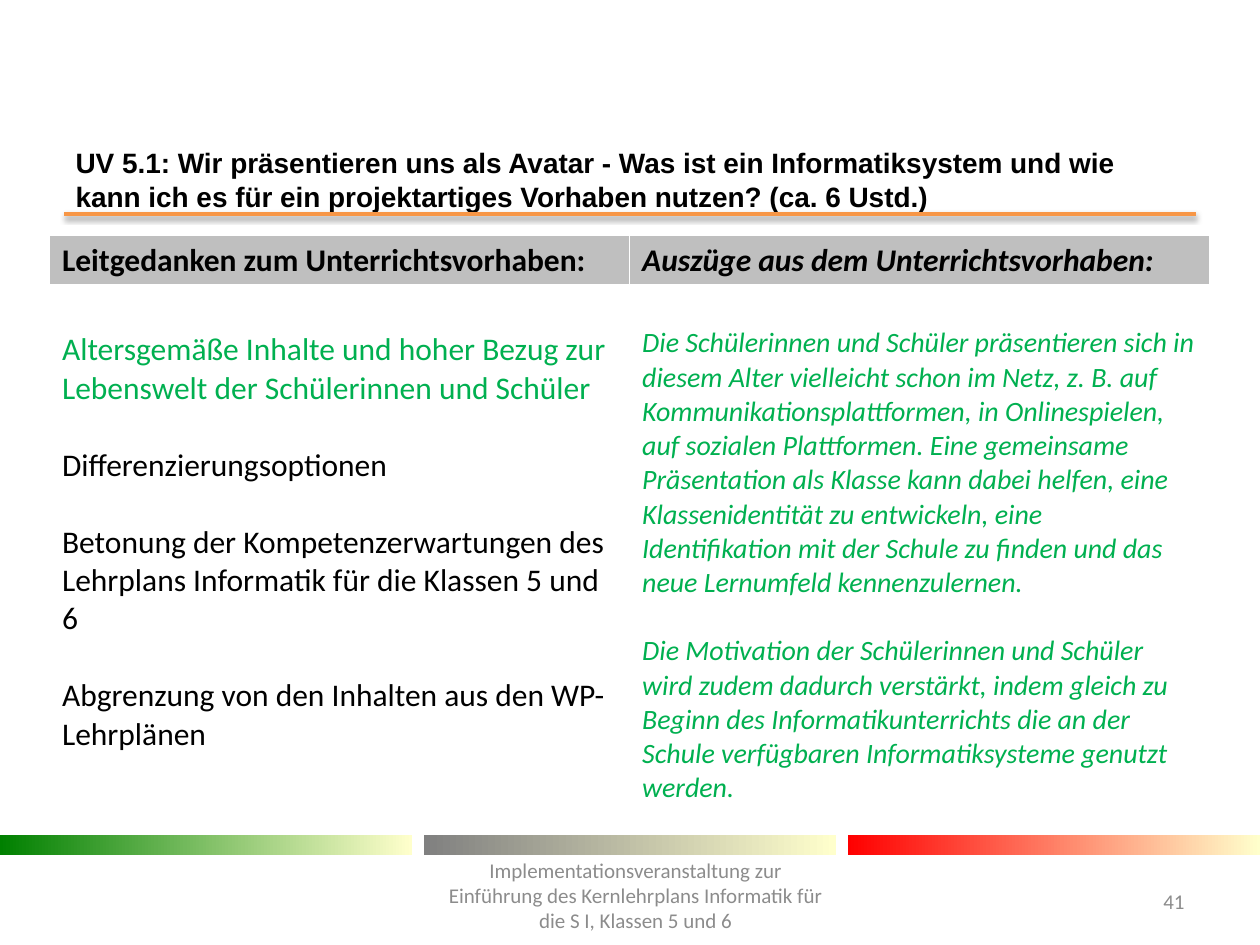
from dataclasses import dataclass
from typing import Optional

from lxml.etree import SubElement
from pptx import Presentation
from pptx.dml.color import RGBColor
from pptx.enum.shapes import MSO_CONNECTOR, MSO_SHAPE
from pptx.enum.text import MSO_ANCHOR, MSO_AUTO_SIZE, PP_ALIGN
from pptx.oxml import parse_xml
from pptx.oxml.ns import nsdecls, qn
from pptx.util import Pt


@dataclass(frozen=True)
class Theme:
    heading_font: str = "Arial"
    body_font: str = "Calibri"
    black: str = "000000"
    white: str = "FFFFFF"
    green: str = "00B050"
    grey: str = "8C8C8C"
    header_fill: str = "BFBFBF"
    rule: str = "F79646"
    band_end: str = "FFFFCC"
    band_starts: tuple = ("008000", "808080", "FF0000")
    title_size: float = 16
    large: float = 18
    medium: float = 16
    small: float = 12


@dataclass(frozen=True)
class TextStyle:
    size: float
    color: str
    font: str = Theme.body_font
    bold: bool = False
    italic: bool = False


@dataclass(frozen=True)
class Box:
    left: float
    top: float
    width: float
    height: float

    def lengths(self) -> tuple:
        return Pt(self.left), Pt(self.top), Pt(self.width), Pt(self.height)


@dataclass(frozen=True)
class Column:
    heading: str
    paragraphs: tuple
    size: float
    colors: tuple
    italic: bool


THEME = Theme()
LINE_FACTOR = 1.22  # line height of the body font relative to its size
CELL_MARGIN = 3.6

TITLE = ("UV 5.1: Wir präsentieren uns als Avatar - Was ist ein Informatiksystem "
         "und wie kann ich es für ein projektartiges Vorhaben nutzen? (ca. 6 Ustd.)")
FOOTER = ("Implementationsveranstaltung zur Einführung des Kernlehrplans "
          "Informatik für die S I, Klassen 5 und 6")
COLUMNS = (
    Column(
        "Leitgedanken zum Unterrichtsvorhaben:",
        ("Altersgemäße Inhalte und hoher Bezug zur Lebenswelt der Schülerinnen und Schüler",
         "Differenzierungsoptionen",
         "Betonung der Kompetenzerwartungen des Lehrplans Informatik für die Klassen 5 und 6",
         "Abgrenzung von den Inhalten aus den WP-Lehrplänen"),
        THEME.large, (THEME.green,) + (THEME.black,) * 3, False),
    Column(
        "Auszüge aus dem Unterrichtsvorhaben:",
        ("Die Schülerinnen und Schüler präsentieren sich in diesem Alter vielleicht schon "
         "im Netz, z. B. auf Kommunikationsplattformen, in Onlinespielen, auf sozialen "
         "Plattformen. Eine gemeinsame Präsentation als Klasse kann dabei helfen, eine "
         "Klassenidentität zu entwickeln, eine Identifikation mit der Schule zu finden "
         "und das neue Lernumfeld kennenzulernen.",
         "Die Motivation der Schülerinnen und Schüler wird zudem dadurch verstärkt, indem "
         "gleich zu Beginn des Informatikunterrichts die an der Schule verfügbaren "
         "Informatiksysteme genutzt werden."),
        THEME.medium, (THEME.green,) * 2, True),
)


def rgb(color: str) -> RGBColor:
    return RGBColor.from_string(color)


def format_runs(paragraph, style: TextStyle) -> None:
    for run in paragraph.runs:
        run.font.name = style.font
        run.font.size = Pt(style.size)
        run.font.bold = style.bold
        run.font.italic = style.italic
        run.font.color.rgb = rgb(style.color)


def fill_frame(frame, text: str, style: TextStyle, align: PP_ALIGN) -> None:
    frame.text = text
    frame.word_wrap = True
    frame.auto_size = MSO_AUTO_SIZE.NONE
    frame.vertical_anchor = MSO_ANCHOR.MIDDLE
    frame.paragraphs[0].alignment = align
    format_runs(frame.paragraphs[0], style)


def add_label(slide, box: Box, text: str, align: PP_ALIGN) -> None:
    label = slide.shapes.add_textbox(*box.lengths())
    fill_frame(label.text_frame, text, TextStyle(THEME.small, THEME.grey), align)


def add_title_rule(slide) -> None:
    rule = slide.shapes.add_connector(
        MSO_CONNECTOR.STRAIGHT, Pt(36.7), Pt(122.4), Pt(683.3), Pt(122.4))
    rule.line.color.rgb = rgb(THEME.rule)
    rule.line.width = Pt(2)
    rule._element.spPr.append(parse_xml(
        f'<a:effectLst {nsdecls("a")}>'
        f'<a:outerShdw blurRad="{Pt(3.1)}" dist="{Pt(1.6)}" dir="5400000" rotWithShape="0">'
        f'<a:srgbClr val="{THEME.black}"><a:alpha val="38000"/></a:srgbClr>'
        '</a:outerShdw></a:effectLst>'))


def add_gradient_band(slide, box: Box, start: str) -> None:
    band = slide.shapes.add_shape(MSO_SHAPE.RECTANGLE, *box.lengths())
    band.shadow.inherit = False
    band.line.fill.background()
    band.fill.gradient()
    band.fill.gradient_angle = 0
    for stop, color in zip(band.fill.gradient_stops, (start, THEME.band_end)):
        stop.color.rgb = rgb(color)


def style_cell(cell, fill: Optional[str], bottom_width: float) -> None:
    """Draw white borders, then the fill, in the order the file format asks for."""
    properties = cell._tc.get_or_add_tcPr()
    for side, width in (("L", 1), ("R", 1), ("T", 1), ("B", bottom_width)):
        border = SubElement(properties, qn(f"a:ln{side}"), w=str(Pt(width)))
        solid = SubElement(border, qn("a:solidFill"))
        SubElement(solid, qn("a:srgbClr"), val=THEME.white)
    if fill:
        cell.fill.solid()
        cell.fill.fore_color.rgb = rgb(fill)
    else:
        cell.fill.background()


def fill_column(header, body, column: Column) -> None:
    style_cell(header, THEME.header_fill, 3)
    header.text_frame.text = column.heading
    format_runs(header.text_frame.paragraphs[0],
                TextStyle(THEME.large, THEME.black, bold=True, italic=column.italic))

    style_cell(body, None, 1)
    gap = round(column.size * LINE_FACTOR, 1)
    body.margin_top = Pt(CELL_MARGIN + gap)
    body.text_frame.text = "\n".join(column.paragraphs)
    for index, paragraph in enumerate(body.text_frame.paragraphs):
        if index:
            paragraph.space_before = Pt(gap)
        format_runs(paragraph, TextStyle(column.size, column.colors[index],
                                         italic=column.italic))


def add_guideline_table(slide) -> None:
    box = Box(28.3, 134.2, 663, 324)
    table = slide.shapes.add_table(2, len(COLUMNS), *box.lengths()).table
    table.horz_banding = False
    header_height = 28
    table.rows[0].height = Pt(header_height)
    table.rows[1].height = Pt(box.height - header_height)
    for index, column in enumerate(COLUMNS):
        table.columns[index].width = Pt(box.width / len(COLUMNS))
        fill_column(table.cell(0, index), table.cell(1, index), column)


def main() -> None:
    presentation = Presentation()
    presentation.slide_width, presentation.slide_height = Pt(720), Pt(540)
    slide = presentation.slides.add_slide(presentation.slide_layouts[5])

    add_title_rule(slide)
    band_width, band_pitch = 235.4, 242.3
    for index, start in enumerate(THEME.band_starts):
        add_gradient_band(slide, Box(index * band_pitch, 477.2, band_width, 11.4), start)

    title = slide.shapes.title
    title.left, title.top, title.width, title.height = Box(36, 88.6, 648, 28).lengths()
    fill_frame(title.text_frame, TITLE,
               TextStyle(THEME.title_size, THEME.black, THEME.heading_font, bold=True),
               PP_ALIGN.LEFT)

    add_guideline_table(slide)
    add_label(slide, Box(638, 500.4, 46, 28.8), "41", PP_ALIGN.RIGHT)
    add_label(slide, Box(247, 491, 232.5, 41), FOOTER, PP_ALIGN.CENTER)
    presentation.save("out.pptx")


if __name__ == "__main__":
    main()
